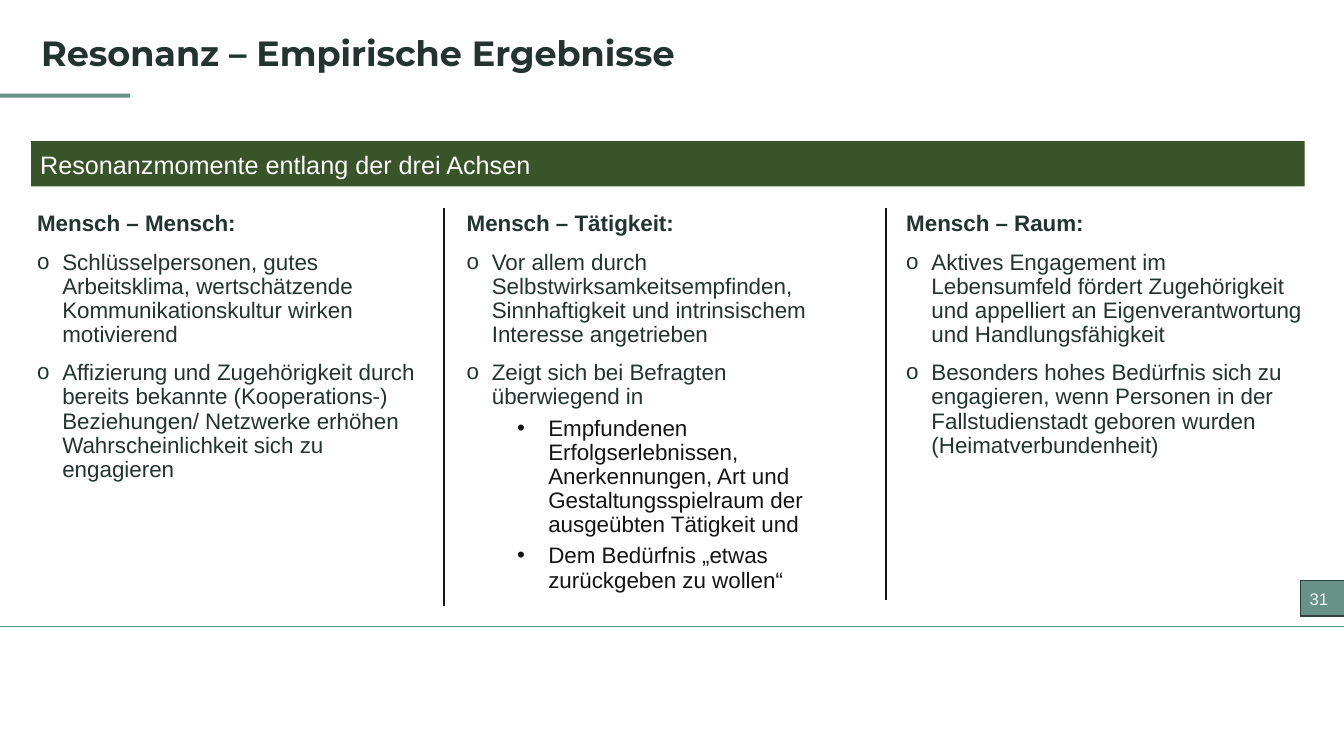
from lxml import etree
from pptx import Presentation
from pptx import util as u
from pptx.dml.color import RGBColor
from pptx.enum import shapes, text
from pptx.oxml.ns import qn

INK, BLACK, SAGE = "23332F", "141414", "679288"


def color(value):
    return RGBColor.from_string(value)


def add_text(p, content, size=16, font="Arial", fill=INK, bold=False,
             bullet=None, indent=0, hang=0, before=0, spacing=0.9):
    p.text = content
    p.line_spacing = spacing
    p.space_before = u.Pt(before)
    if bullet:
        pPr = p._p.get_or_add_pPr()
        pPr.set("marL", str(u.Inches(indent)))
        pPr.set("indent", str(-u.Inches(hang)))
        clr = etree.SubElement(pPr, qn("a:buClr"))
        etree.SubElement(clr, qn("a:srgbClr"), val=fill)
        etree.SubElement(pPr, qn("a:buFont"), typeface="Arial")
        etree.SubElement(pPr, qn("a:buChar"), char=bullet)
    for br in p._p.findall(qn("a:br")):
        etree.SubElement(br, qn("a:rPr"), sz=str(size * 100))
    for r in p.runs:
        r.font.size = u.Pt(size)
        r.font.name = font
        r.font.bold = bold
        r.font.color.rgb = color(fill)


prs = Presentation()
prs.slide_width, prs.slide_height = u.Inches(13.33), u.Inches(7.5)
s = prs.slides.add_slide(prs.slide_layouts[6])

rules = [
    (-0.08, 6.22, 13.44, 6.22, SAGE, 0.75),
    (4.4, 2.06, 4.4, 6.01, BLACK, 1.5),
    (8.79, 2.06, 8.79, 5.95, BLACK, 1.5),
]
for x1, y1, x2, y2, stroke, width in rules:
    line = s.shapes.add_connector(shapes.MSO_CONNECTOR.STRAIGHT,
                                  *map(u.Inches, (x1, y1, x2, y2)))
    line.line.color.rgb = color(stroke)
    line.line.width = u.Pt(width)
    etree.SubElement(line._element.spPr, qn("a:effectLst"))

RECT = shapes.MSO_SHAPE.RECTANGLE
blocks = [
    (shapes.MSO_SHAPE.ROUNDED_RECTANGLE, (-0.1, 0.93, 1.39, 0.04), "679186", None),
    (RECT, (0.31, 1.4, 12.63, 0.45), "395429", None),
    (RECT, (12.9, 5.76, 0.52, 0.35), SAGE, "2D403C"),
]
for kind, box, fill, stroke in blocks:
    sp = s.shapes.add_shape(kind, *map(u.Inches, box))
    sp.shadow.inherit = False
    sp.fill.solid()
    sp.fill.fore_color.rgb = color(fill)
    if stroke:
        sp.line.color.rgb = color(stroke)
        sp.line.width = u.Pt(1)
    else:
        sp.line.fill.background()

point = dict(bullet="o", indent=0.25, hang=0.25, before=10)
subpoint = dict(bullet="•", indent=0.81, hang=0.31, before=5, fill=BLACK)
head = dict(bold=True)

TOP, MIDDLE = text.MSO_ANCHOR.TOP, text.MSO_ANCHOR.MIDDLE
boxes = [
    ((0.31, 0.31, 7.87, 0.52), TOP, [
        ("Resonanz – Empirische Ergebnisse", dict(size=25, font="Montserrat", bold=True)),
    ]),
    ((0.3, 1.47, 12.64, 0.35), MIDDLE, [
        ("Resonanzmomente entlang der drei Achsen", dict(size=18, fill="FFFFFF")),
    ]),
    ((12.89, 5.79, 0.64, 0.3), TOP, [
        ("31", dict(size=12, fill="F2F2F2", spacing=1.0)),
    ]),
    ((0.27, 2.06, 4.13, 4.15), TOP, [
        ("Mensch – Mensch:", head),
        ("Schlüsselpersonen, gutes Arbeitsklima, wertschätzende "
         "Kommunikationskultur wirken motivierend", point),
        ("Affizierung und Zugehörigkeit durch bereits bekannte (Kooperations-) "
         "Beziehungen/ Netzwerke erhöhen Wahrscheinlichkeit sich zu engagieren", point),
    ]),
    ((4.53, 2.06, 4.31, 4.15), TOP, [
        ("Mensch – Tätigkeit:", head),
        ("Vor allem durch Selbstwirksamkeitsempfinden, Sinnhaftigkeit und "
         "intrinsischem Interesse angetrieben", point),
        ("Zeigt sich bei Befragten \vüberwiegend in", point),
        ("Empfundenen Erfolgserlebnissen, Anerkennungen, Art und "
         "Gestaltungsspielraum der ausgeübten Tätigkeit und", subpoint),
        ("Dem Bedürfnis „etwas zurückgeben zu wollen“", subpoint),
    ]),
    ((8.89, 2.06, 4.17, 4.15), TOP, [
        ("Mensch – Raum:", head),
        ("Aktives Engagement im Lebensumfeld fördert Zugehörigkeit und "
         "appelliert an Eigenverantwortung und Handlungsfähigkeit", point),
        ("Besonders hohes Bedürfnis sich zu engagieren, wenn Personen in der "
         "Fallstudienstadt geboren wurden (Heimatverbundenheit)", point),
    ]),
]
for box, anchor, paragraphs in boxes:
    tf = s.shapes.add_textbox(*map(u.Inches, box)).text_frame
    tf.word_wrap = True
    tf.vertical_anchor = anchor
    for i, (content, style) in enumerate(paragraphs):
        p = tf.add_paragraph() if i else tf.paragraphs[0]
        add_text(p, content, **style)

prs.save("out.pptx")
